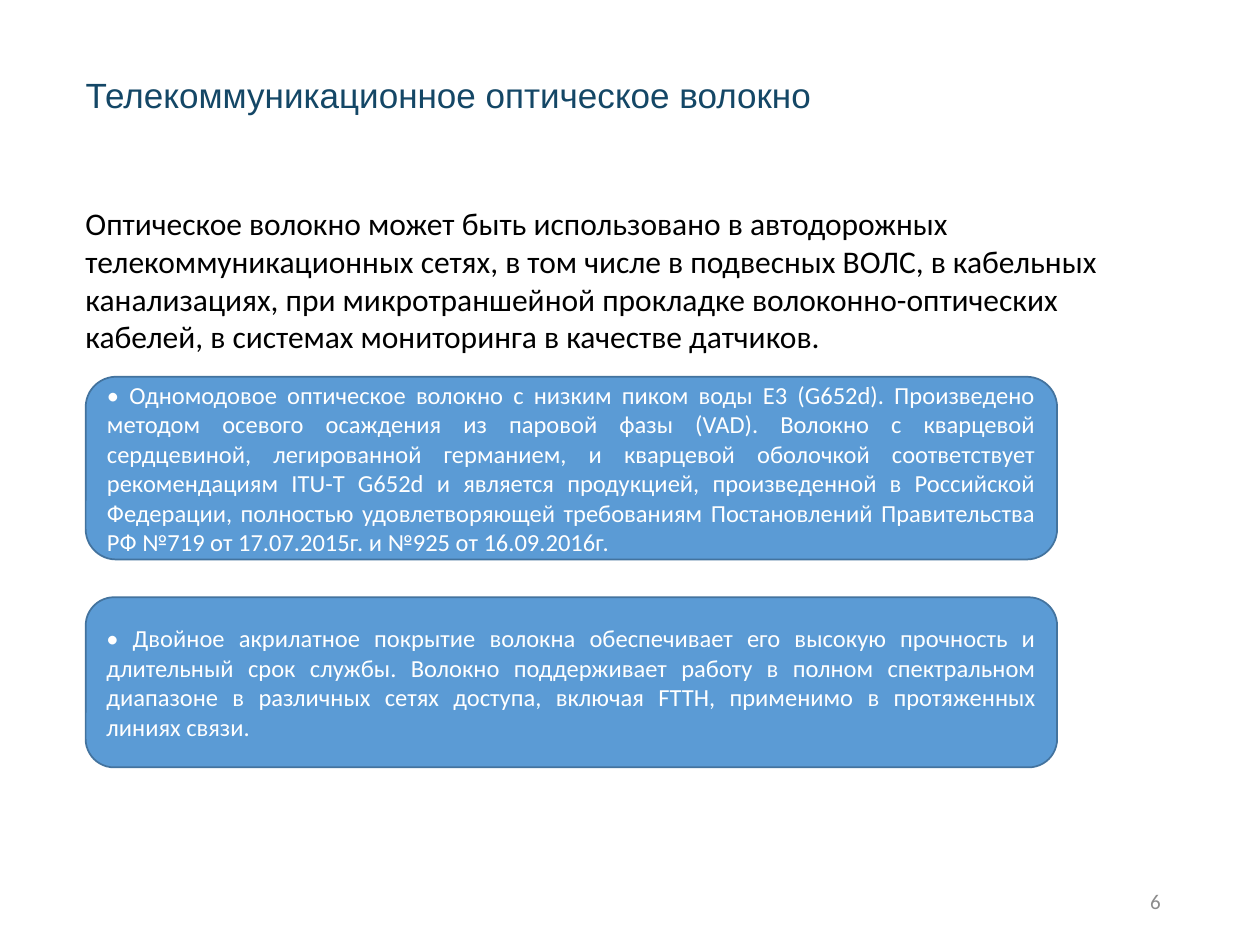
from pptx import Presentation
from pptx.dml.color import RGBColor
from pptx.enum.shapes import MSO_SHAPE as Shape
from pptx.enum.text import MSO_ANCHOR as Anchor, PP_ALIGN as Align
from pptx.util import Inches, Pt

# Content
TITLE = "Телекоммуникационное оптическое волокно"
INTRO = (
    "Оптическое волокно может быть использовано в автодорожных "
    "телекоммуникационных сетях, в том числе в подвесных ВОЛС, в кабельных "
    "канализациях, при микротраншейной прокладке волоконно-оптических "
    "кабелей, в системах мониторинга в качестве датчиков."
)
# Card text, height
CARDS = [
    ("• Одномодовое оптическое волокно с низким пиком воды Е3 (G652d). "
     "Произведено методом осевого осаждения из паровой фазы (VAD). Волокно с "
     "кварцевой сердцевиной, легированной германием, и кварцевой оболочкой "
     "соответствует рекомендациям ITU-T G652d и является продукцией, "
     "произведенной в Российской Федерации, полностью удовлетворяющей "
     "требованиям Постановлений Правительства РФ №719 от 17.07.2015г. и №925 "
     "от 16.09.2016г.", 1.45),
    ("• Двойное акрилатное покрытие волокна обеспечивает его высокую прочность "
     "и длительный срок службы. Волокно поддерживает работу в полном "
     "спектральном диапазоне в различных сетях доступа, включая FTTH, применимо "
     "в протяженных линиях связи.", 1.35),
]
PAGE_NUMBER = "6"

# Layout
TEXT_LEFT = 0.58
CARD_LEFT, CARD_TOP, CARD_WIDTH, CARD_GAP = 0.68, 2.99, 7.71, 0.3


def color(hex_code):
    return RGBColor.from_string(hex_code)


def write(shape, text, size, hex_code, font="Calibri", align=Align.LEFT, anchor=Anchor.TOP):
    frame = shape.text_frame
    frame.word_wrap = True
    frame.vertical_anchor = anchor
    paragraph = frame.paragraphs[0]
    paragraph.alignment = align
    run = paragraph.add_run()
    run.text = text
    run.font.name = font
    run.font.size = Pt(size)
    run.font.color.rgb = color(hex_code)


def box(*lengths):
    return [Inches(length) for length in lengths]


prs = Presentation()
prs.slide_width, prs.slide_height = box(10, 7.5)
slide = prs.slides.add_slide(prs.slide_layouts[5])
shapes = slide.shapes

# Title
title = shapes.title
title.left, title.top, title.width, title.height = box(TEXT_LEFT, 0.53, 8.49, 0.44)
write(title, TITLE, 20, "144766", font="Arial")

# Introduction
intro = shapes.add_textbox(*box(TEXT_LEFT, 1.57, 8.35, 1.31))
write(intro, INTRO, 18, "000000")

# Cards, stacked with an equal gap
top = CARD_TOP
for text, height in CARDS:
    card = shapes.add_shape(Shape.ROUNDED_RECTANGLE, *box(CARD_LEFT, top, CARD_WIDTH, height))
    card.shadow.inherit = False
    card.fill.solid()
    card.fill.fore_color.rgb = color("5B9BD5")
    card.line.color.rgb = color("43739E")
    card.line.width = Pt(1)
    write(card, text, 14, "FFFFFF", align=Align.JUSTIFY, anchor=Anchor.MIDDLE)
    top += height + CARD_GAP

# Page number
page_number = shapes.add_textbox(*box(7.06, 6.95, 2.25, 0.4))
write(page_number, PAGE_NUMBER, 12, "8C8C8C", align=Align.RIGHT, anchor=Anchor.MIDDLE)

prs.save("out.pptx")
